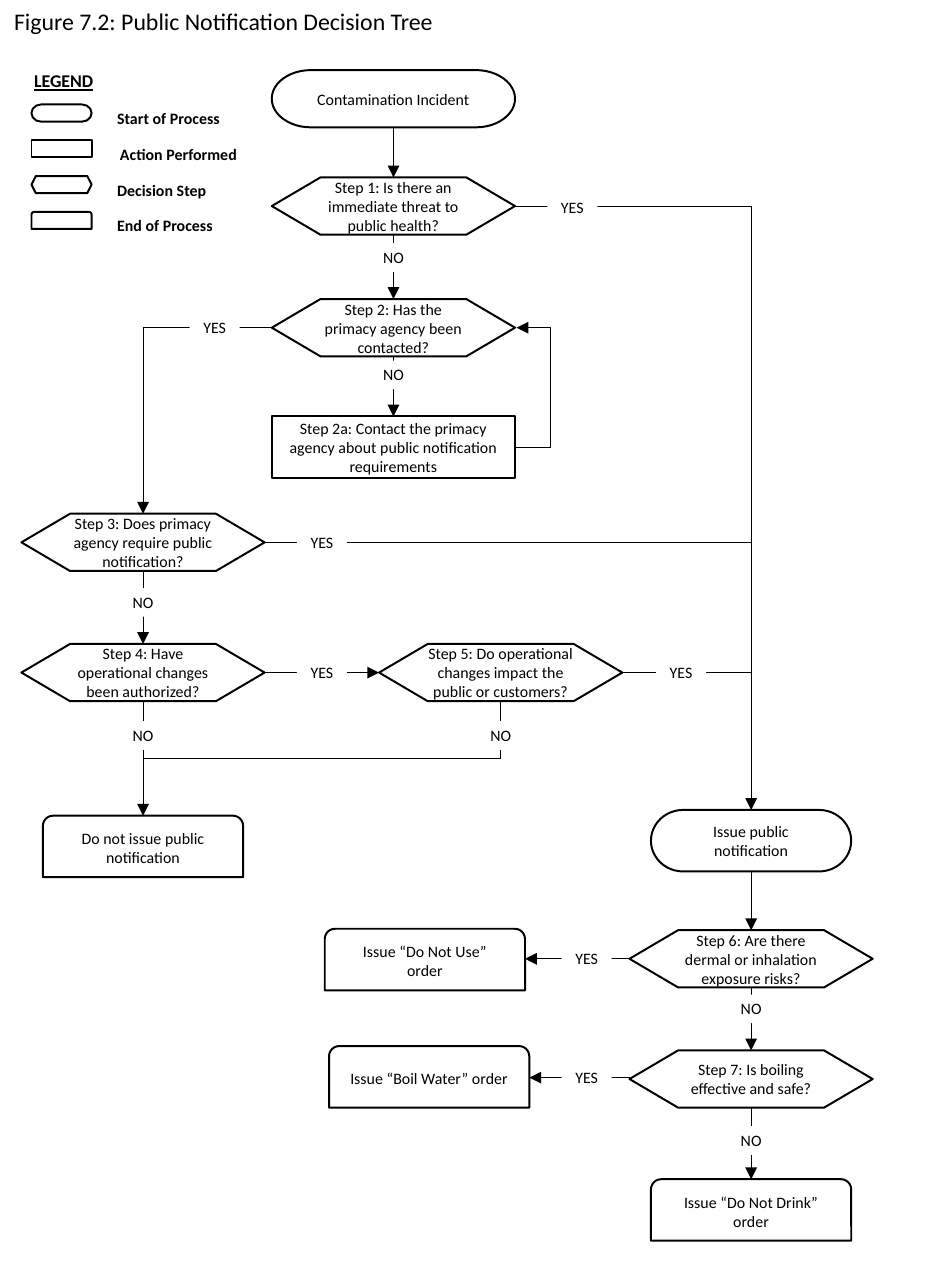
from dataclasses import dataclass
from itertools import pairwise

from lxml import etree
from pptx import Presentation
from pptx.dml.color import RGBColor
from pptx.enum.shapes import MSO_CONNECTOR, MSO_SHAPE as Kind
from pptx.enum.text import MSO_ANCHOR as Anchor, PP_ALIGN as Align
from pptx.oxml.ns import qn
from pptx.util import Inches, Pt


@dataclass(frozen=True)
class Theme:
    font: str = "Calibri"
    ink: RGBColor = RGBColor(0, 0, 0)
    paper: RGBColor = RGBColor(255, 255, 255)
    title: int = 12
    heading: int = 9
    body: int = 8
    outline: float = 1
    route: float = 0.5


theme = Theme()
presentation = Presentation()
presentation.slide_width, presentation.slide_height = Inches(6.5), Inches(9)
slide = presentation.slides.add_slide(presentation.slide_layouts[6])


def add_text(text, left, top, width, height, *, kind=None, outlined=True,
             size=theme.body, bold=False, underline=False,
             align=Align.LEFT, anchor=Anchor.TOP, insets=(0.1, 0.05)):
    """Add a shape of the given kind, or a text box when kind is None."""
    box = [Inches(value) for value in (left, top, width, height)]
    if kind is None:
        shape = slide.shapes.add_textbox(*box)
    else:
        shape = slide.shapes.add_shape(kind, *box)
        shape.shadow.inherit = False
        shape.fill.solid()
        shape.fill.fore_color.rgb = theme.paper
        if outlined:
            shape.line.color.rgb = theme.ink
            shape.line.width = Pt(theme.outline)
        else:
            shape.line.fill.background()
    if not text:
        return
    frame = shape.text_frame
    frame.word_wrap = True
    frame.vertical_anchor = anchor
    frame.margin_left = frame.margin_right = Inches(insets[0])
    frame.margin_top = frame.margin_bottom = Inches(insets[1])
    paragraph = frame.paragraphs[0]
    paragraph.alignment = align
    run = paragraph.add_run()
    run.text = text
    run.font.name = theme.font
    run.font.size = Pt(size)
    run.font.bold = bold
    run.font.underline = underline
    run.font.color.rgb = theme.ink


def add_route(*points, arrow=True):
    """Join the points with straight legs, the last one ending in an arrow."""
    for start, end in pairwise(points):
        leg = slide.shapes.add_connector(
            MSO_CONNECTOR.STRAIGHT, *[Inches(value) for value in start + end])
        leg.line.color.rgb = theme.ink
        leg.line.width = Pt(theme.route)
        properties = leg._element.spPr
        if arrow and end == points[-1]:
            etree.SubElement(properties.find(qn("a:ln")), qn("a:tailEnd"), type="triangle")
        etree.SubElement(properties, qn("a:effectLst"))


# Column centres of the flow
LEFT, MIDDLE, INNER, RIGHT = 1.0, 2.75, 3.5, 5.25

# Arrows, straight down and across
for x, start, end in [
    (MIDDLE, 0.89, 1.24), (MIDDLE, 1.64, 2.09), (MIDDLE, 2.49, 2.91),
    (LEFT, 3.99, 4.5), (LEFT, 4.9, 5.7),
    (RIGHT, 6.09, 6.5), (RIGHT, 6.9, 7.34), (RIGHT, 7.74, 8.24),
]:
    add_route((x, start), (x, end))
for y, start, end in [(4.7, 1.85, 2.65), (6.7, 4.4, 3.67), (7.53, 4.4, 3.7)]:
    add_route((start, y), (end, y))

# Arrows with corners, and the branches that join them
add_route((3.6, 1.44), (RIGHT, 1.44), (RIGHT, 5.66))
add_route((1.9, 2.29), (LEFT, 2.29), (LEFT, 3.59))
add_route((3.6, 3.13), (3.85, 3.13), (3.85, 2.29), (3.61, 2.29))
add_route((1.85, 3.79), (RIGHT, 3.79), arrow=False)
add_route((4.35, 4.7), (RIGHT, 4.7), arrow=False)
add_route((INNER, 4.9), (INNER, 5.3), (LEFT, 5.3), arrow=False)

# Legend
add_text("LEGEND", 0.14, 0.44, 1.03, 0.25, size=theme.heading, bold=True, underline=True)
for row, (kind, meaning, left) in enumerate([
    (Kind.FLOWCHART_TERMINATOR, "Start of Process", 0.72),
    (Kind.RECTANGLE, "Action Performed", 0.74),
    (Kind.HEXAGON, "Decision Step", 0.72),
    (Kind.ROUND_2_SAME_RECTANGLE, "End of Process", 0.72),
]):
    top = 0.73 + 0.25 * row
    add_text("", 0.22, top, 0.42, 0.12, kind=kind)
    add_text(meaning, left, top - 0.02, 1.28, 0.24, bold=True)

# Decision steps
for center, top, question in [
    (MIDDLE, 1.24, "Step 1: Is there an immediate threat to public health?"),
    (MIDDLE, 2.09, "Step 2: Has the primacy agency been contacted?"),
    (LEFT, 3.59, "Step 3: Does primacy agency require public notification?"),
    (LEFT, 4.5, "Step 4: Have operational changes been authorized?"),
    (INNER, 4.5, "Step 5: Do operational changes impact the public or customers?"),
    (RIGHT, 6.5, "Step 6: Are there dermal or inhalation exposure risks?"),
    (RIGHT, 7.34, "Step 7: Is boiling effective and safe?"),
]:
    add_text(question, center - 0.85, top, 1.7, 0.4, kind=Kind.FLOWCHART_PREPARATION,
             align=Align.CENTER, anchor=Anchor.MIDDLE, insets=(0, 0))

# Starts, actions and ends
START, ACTION, END = (Kind.FLOWCHART_TERMINATOR, Kind.FLOWCHART_PROCESS,
                      Kind.ROUND_2_SAME_RECTANGLE)
for kind, center, top, width, height, inset, text in [
    (START, MIDDLE, 0.49, 1.7, 0.4, 0.07, "Contamination Incident"),
    (ACTION, MIDDLE, 2.91, 1.7, 0.43, 0.12,
     "Step 2a: Contact the primacy agency about public notification requirements"),
    (START, RIGHT, 5.66, 1.4, 0.43, 0.12, "Issue public notification"),
    (END, LEFT, 5.7, 1.4, 0.43, 0.12, "Do not issue public notification"),
    (END, 2.97, 6.49, 1.4, 0.43, 0.12, "Issue “Do Not Use” order"),
    (END, 3.0, 7.31, 1.4, 0.43, 0.12, "Issue “Boil Water” order"),
    (END, RIGHT, 8.24, 1.4, 0.43, 0.12, "Issue “Do Not Drink” order"),
]:
    add_text(text, center - width / 2, top, width, height, kind=kind,
             align=Align.CENTER, anchor=Anchor.MIDDLE, insets=(inset, 0.03))

# Answers, set over the arrows
answers = {
    ("YES", 0.35): [(4.0, 1.35), (1.5, 2.19), (2.25, 3.69), (2.25, 4.6),
                    (4.76, 4.6), (4.1, 6.6), (4.1, 7.43)],
    ("NO", 0.32): [(MIDDLE, 1.7), (MIDDLE, 2.52), (LEFT, 4.11), (LEFT, 5.04),
                   (INNER, 5.04), (RIGHT, 6.95), (RIGHT, 7.87)],
}
for (answer, width), places in answers.items():
    for center, top in places:
        add_text(answer, center - width / 2, top, width, 0.2, kind=Kind.RECTANGLE,
                 outlined=False, align=Align.CENTER, insets=(0.07, 0.03))

add_text("Figure 7.2: Public Notification Decision Tree", 0, 0, 6.5, 0.3, size=theme.title)

presentation.save("out.pptx")
